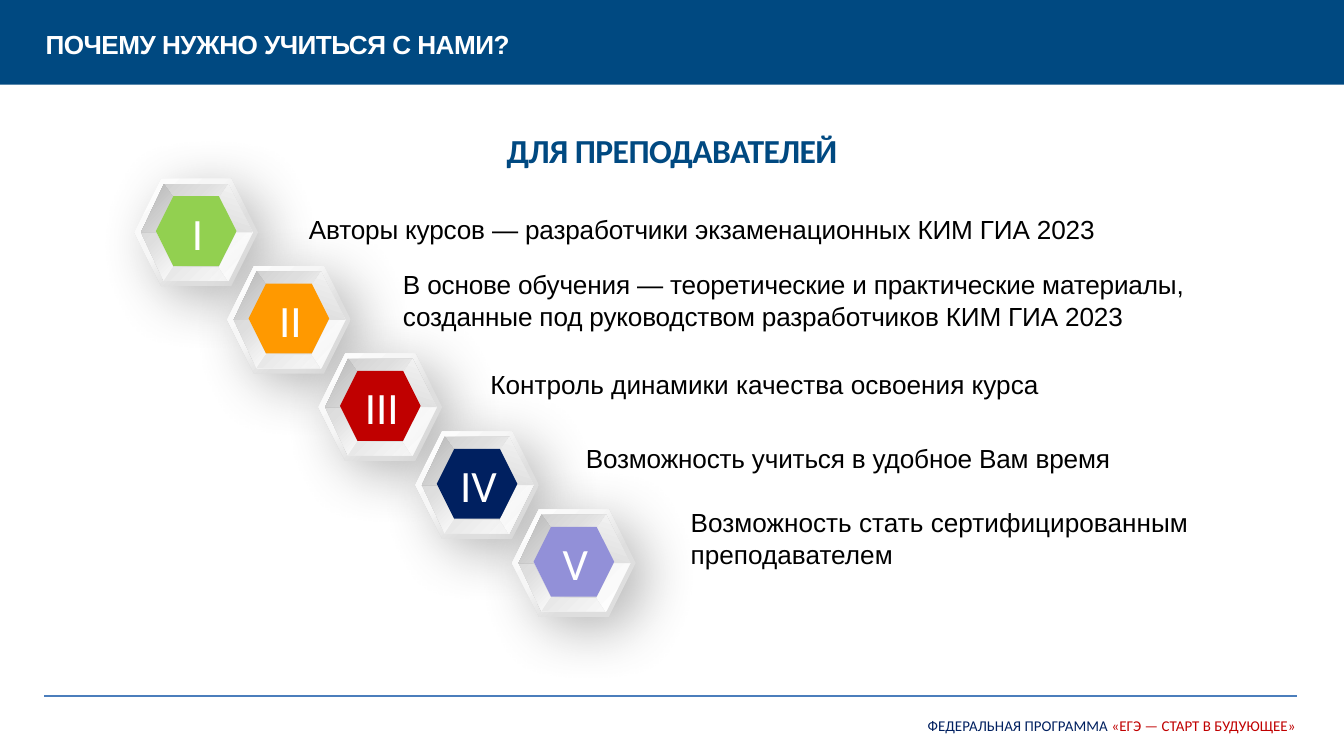
from lxml import etree
from pptx import Presentation
from pptx.dml.color import RGBColor
from pptx.enum.shapes import MSO_CONNECTOR, MSO_SHAPE as Shape
from pptx.enum.text import PP_ALIGN as Align
from pptx.oxml.ns import qn
from pptx.util import Inches, Pt

NAVY, RED, BLUE, WHITE = "002060", "C00000", "004981", "FFFFFF"
SHADE = [(0, "B4B4B4"), (100, "DFDFDF")]
GLOW = [(0, "E6E6E6"), (100, "F7F7F7")]
SIDE = [(0, "DEDEDE"), (100, "F4F4F4")]
RIM = [(0, "CBCBCB"), (32, "DEDEDE"), (57, "F5F5F5"), (100, "FFFFFF")]
BASE = [(17, "DEDEDE"), (37, "E0E0E0"), (61, "F6F6F6"), (100, "FFFFFF")]

STEPS = [
    ("I", "92D050", (1, 1.33), (2.03, 1.54, 6.78, 0.34), -0.1,
     "Авторы курсов — разработчики экзаменационных КИМ ГИА 2023"),
    ("II", "FF9900", (1.69, 1.98), (2.73, 1.95, 6.79, 0.57), -0.1,
     "В основе обучения — теоретические и практические материалы, "
     "созданные под руководством разработчиков КИМ ГИА 2023"),
    ("III", RED, (2.37, 2.63), (3.38, 2.69, 6.13, 0.34), 0,
     "Контроль динамики качества освоения курса"),
    ("IV", NAVY, (3.09, 3.21), (4.09, 3.24, 4.67, 0.34), -0.1,
     "Возможность учиться в удобное Вам время"),
    ("V", "9290D8", (3.81, 3.79), (4.87, 3.72, 4.72, 0.57), 0,
     "Возможность стать сертифицированным преподавателем"),
]


def color(value):
    return RGBColor.from_string(value)


def add_child(parent, tag, **attributes):
    child = etree.SubElement(parent, qn(tag))
    for name, value in attributes.items():
        child.set(name, str(value))
    return child


def paint(shape, fill, angle=45):
    shape.shadow.inherit = False
    shape.line.fill.background()
    if isinstance(fill, str):
        shape.fill.solid()
        shape.fill.fore_color.rgb = color(fill)
        return shape
    shape.fill.gradient()
    shape.fill.gradient_angle = 360 - angle
    stops = shape._element.spPr.find(".//" + qn("a:gsLst"))
    for stop in list(stops):
        stops.remove(stop)
    for position, value in fill:
        stop = add_child(stops, "a:gs", pos=position * 1000)
        add_child(stop, "a:srgbClr", val=value)
    return shape


def add_preset(slide, kind, box, fill, angle=45):
    shape = slide.shapes.add_shape(kind, *map(Inches, box))
    return paint(shape, fill, angle)


def add_outline(slide, left, top, contours, fill, angle=45):
    contours = [[(Inches(left + x), Inches(top + y)) for x, y in points]
                for points in contours]
    builder = slide.shapes.build_freeform(*contours[0][0])
    builder.add_line_segments(contours[0][1:], close=True)
    for points in contours[1:]:
        builder.move_to(*points[0])
        builder.add_line_segments(points[1:], close=True)
    return paint(builder.convert_to_shape(), fill, angle)


def add_text(slide, box, *runs, size=14, font="Arial", bold=False,
             align=Align.LEFT, spacing=0, indent=0, insets=None):
    frame = slide.shapes.add_textbox(*map(Inches, box)).text_frame
    frame.word_wrap = True
    if insets:
        (frame.margin_left, frame.margin_top,
         frame.margin_right, frame.margin_bottom) = map(Inches, insets)
    paragraph = frame.paragraphs[0]
    paragraph.alignment = align
    if indent:
        paragraph._p.get_or_add_pPr().set("marL", str(Inches(indent)))
    for text, value in runs:
        run = paragraph.add_run()
        run.text = text
        run.font.size = Pt(size)
        run.font.name = font
        run.font.bold = bold
        run.font.color.rgb = color(value)
        if spacing:
            run._r.get_or_add_rPr().set("spc", str(round(spacing * 100)))


def add_soft_shadow(shape):
    effects = shape._element.spPr.find(qn("a:effectLst"))
    shadow = add_child(effects, "a:outerShdw", blurRad=Pt(30), dist=Pt(10),
                       dir=40 * 60000, algn="tl", rotWithShape=0)
    tint = add_child(shadow, "a:srgbClr", val="696969")
    add_child(tint, "a:alpha", val=47000)


def add_header(slide, left, top, width, height):
    add_preset(slide, Shape.RECTANGLE, (left, top, width, height), BLUE)
    add_text(slide, (left + 0.33, top + 0.2, 7.5, 0.25),
             ("ПОЧЕМУ НУЖНО УЧИТЬСЯ С НАМИ?", WHITE),
             bold=True, spacing=-0.3, indent=0.01, insets=(0, 0.01, 0, 0))


def add_footer(slide, left, top, width):
    line = slide.shapes.add_connector(
        MSO_CONNECTOR.STRAIGHT, Inches(left), Inches(top),
        Inches(left + width), Inches(top))
    line.line.color.rgb = color("4B7EBC")
    line.line.width = Pt(0.75)
    add_child(line._element.spPr, "a:effectLst")
    add_text(slide, (left + 5.74, top + 0.1, 3.67, 0.24),
             ("ФЕДЕРАЛЬНАЯ ПРОГРАММА ", NAVY),
             ("«ЕГЭ — СТАРТ В БУДУЮЩЕЕ»", RED),
             size=8, font="Calibri", align=Align.RIGHT)


def add_badge(slide, left, top, numeral, fill):
    inner = [(0.29, 0.14), (0.16, 0.4), (0.29, 0.66),
             (0.63, 0.66), (0.76, 0.4), (0.63, 0.14)]
    outer = [(0.22, 0.04), (0.7, 0.04), (0.88, 0.4),
             (0.7, 0.76), (0.22, 0.76), (0.05, 0.4)]
    upper = add_preset(slide, Shape.TRAPEZOID,
                       (left + 0.22, top + 0.04, 0.47, 0.1), SHADE)
    upper._element.spPr.xfrm.set("flipV", "1")
    base = add_preset(slide, Shape.HEXAGON, (left, top, 0.92, 0.8), BASE, 225)
    add_soft_shadow(base)
    add_outline(slide, left, top, [inner, outer], RIM)
    lower = add_preset(slide, Shape.TRAPEZOID,
                       (left + 0.22, top + 0.66, 0.47, 0.1), GLOW)
    for trapezoid in (upper, lower):
        trapezoid.adjustments[0] = 0.66
    add_outline(slide, left, top,
                [[outer[1], inner[5], inner[4], outer[2]]], SIDE, 288)
    add_outline(slide, left, top,
                [[outer[0], inner[0], inner[1], outer[5]]], SHADE)
    add_preset(slide, Shape.HEXAGON,
               (left + 0.16, top + 0.13, 0.6, 0.52), fill)
    add_text(slide, (left + 0.16, top + 0.15, 0.62, 0.5), (numeral, WHITE),
             size=24, font="Calibri", align=Align.CENTER)


def main():
    presentation = Presentation()
    presentation.slide_width = Inches(10)
    presentation.slide_height = Inches(10 * 9 / 16)
    slide = presentation.slides.add_slide(presentation.slide_layouts[6])
    add_header(slide, 0, 0, 10, 0.63)
    add_footer(slide, 0.33, 5.18, 9.32)
    add_text(slide, (2.5, 0.92, 5, 0.4), ("ДЛЯ ПРЕПОДАВАТЕЛЕЙ", BLUE),
             size=18, font="Calibri", bold=True, align=Align.CENTER,
             spacing=-0.3)
    for numeral, fill, corner, caption_box, spacing, caption in STEPS:
        add_badge(slide, *corner, numeral, fill)
        add_text(slide, caption_box, (caption, "000000"),
                 spacing=spacing, indent=0.17)
    presentation.save("out.pptx")


if __name__ == "__main__":
    main()
